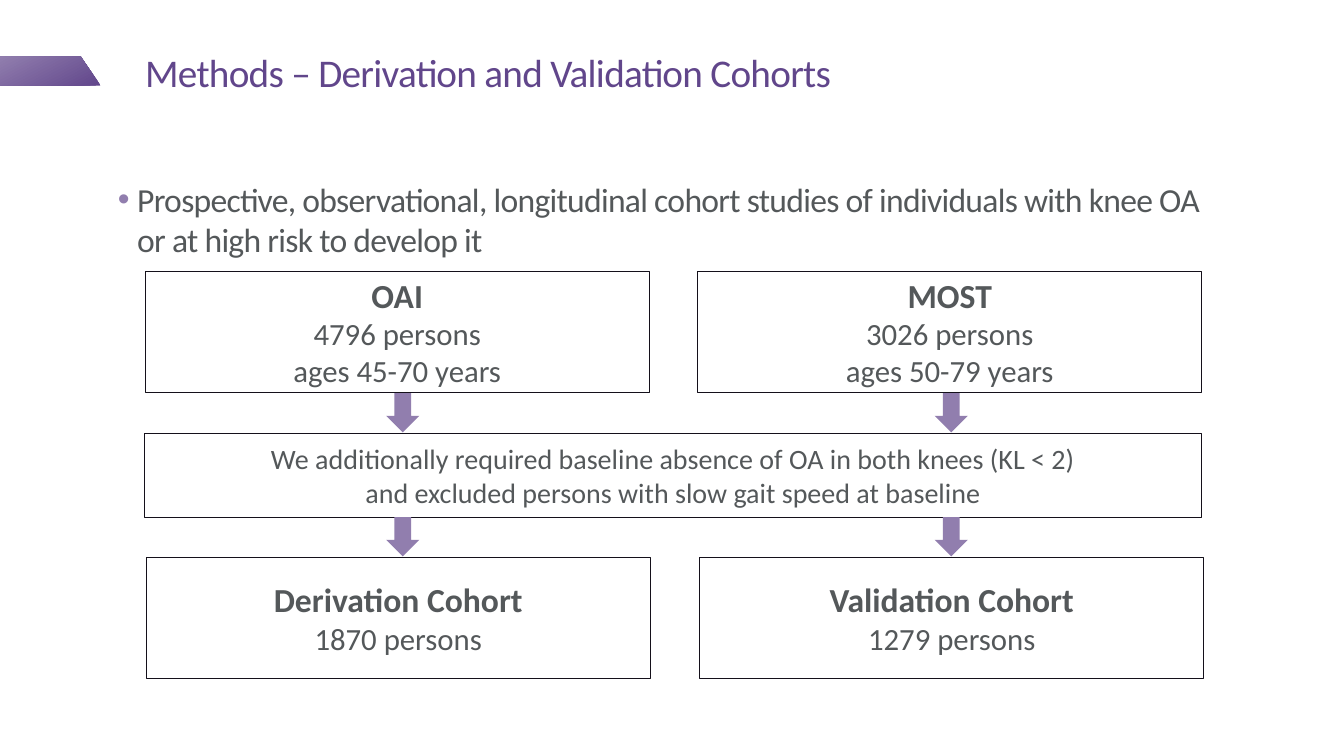
import pptx
import pptx.dml.color
import pptx.enum.shapes
import pptx.enum.text
import pptx.util
from lxml import etree
from pptx.oxml.ns import qn

PX = 9144  # EMU per px, 100 px to the inch
PURPLE, LILAC, GREY, INK = "61468B", "917EAE", "54585A", "14101A"
SHAPES = pptx.enum.shapes.MSO_SHAPE
ANCHOR = pptx.enum.text.MSO_ANCHOR
ALIGN = pptx.enum.text.PP_ALIGN


def emu(*lengths):
    return [pptx.util.Emu(length * PX) for length in lengths]


def colour(value):
    return pptx.dml.color.RGBColor.from_string(value)


def set_font(paragraph, size, value, bold=False):
    paragraph.font.name = "Calibri"
    paragraph.font.size = pptx.util.Pt(size)
    paragraph.font.bold = bold
    paragraph.font.color.rgb = colour(value)


def tighten(paragraph):
    """Draw the letters half a point closer together."""
    for run in paragraph.runs:
        run.font._element.set("spc", "-50")


def set_frame(frame, anchor, right=0, bottom=0):
    frame.word_wrap = True
    frame.auto_size = pptx.enum.text.MSO_AUTO_SIZE.NONE
    frame.vertical_anchor = anchor
    frame.margin_left = frame.margin_top = 0
    frame.margin_right, frame.margin_bottom = emu(right, bottom)


def add_title_tab(slide, left, top, width, height):
    """Purple tab with a slanted right end at the slide's edge."""
    builder = slide.shapes.build_freeform(left, top, scale=PX)
    builder.add_line_segments([
        (left + width - 20, top),
        (left + width, top + height),
        (left, top + height),
    ])
    tab = builder.convert_to_shape()
    tab.shadow.inherit = False
    tab.line.fill.background()
    tab.fill.gradient()
    tab.fill.gradient_angle = 118
    for stop, value in zip(tab.fill.gradient_stops, (PURPLE, LILAC)):
        stop.color.rgb = colour(value)


def set_title(slide, text, *box):
    title = slide.shapes.title
    title.left, title.top, title.width, title.height = emu(*box)
    set_frame(title.text_frame, ANCHOR.BOTTOM, 10, 5)
    paragraph = title.text_frame.paragraphs[0]
    paragraph.text = text
    paragraph.alignment = ALIGN.LEFT
    paragraph.line_spacing = 0.85
    set_font(paragraph, 28, PURPLE)
    tighten(paragraph)


def add_bullet_text(slide, text, *box):
    frame = slide.shapes.add_textbox(*emu(*box)).text_frame
    set_frame(frame, ANCHOR.TOP, 10, 5)
    paragraph = frame.paragraphs[0]
    paragraph.text = text
    properties = paragraph._p.get_or_add_pPr()
    properties.set("marL", str(19 * PX))
    properties.set("indent", str(-19 * PX))
    bullet_colour = etree.SubElement(properties, qn("a:buClr"))
    etree.SubElement(bullet_colour, qn("a:srgbClr"), val=LILAC)
    etree.SubElement(properties, qn("a:buFont"), typeface="Arial")
    etree.SubElement(properties, qn("a:buChar"), char="•")
    set_font(paragraph, 24, GREY)
    tighten(paragraph)


def add_box(slide, lines, *box):
    """Outlined box of centred lines, each given as (text, size, bold)."""
    shape = slide.shapes.add_shape(SHAPES.RECTANGLE, *emu(*box))
    shape.shadow.inherit = False
    shape.fill.background()
    shape.line.color.rgb = colour(INK)
    shape.line.width = pptx.util.Pt(0.75)
    frame = shape.text_frame
    set_frame(frame, ANCHOR.MIDDLE)
    for index, (text, size, bold) in enumerate(lines):
        paragraph = frame.add_paragraph() if index else frame.paragraphs[0]
        paragraph.text = text
        paragraph.alignment = ALIGN.CENTER
        set_font(paragraph, size, GREY, bold)


def add_cohort(slide, name, details, left, top):
    lines = [(name, 24, True)] + [(detail, 22, False) for detail in details]
    add_box(slide, lines, left, top, 500, 120)


def add_arrow(slide, left, top):
    arrow = slide.shapes.add_shape(SHAPES.DOWN_ARROW, *emu(left, top, 33, 39))
    arrow.shadow.inherit = False
    arrow.fill.solid()
    arrow.fill.fore_color.rgb = colour(LILAC)
    arrow.line.fill.background()


def add_cohort_flow(slide, left, top):
    """Two studies, the shared criteria below them, and the two cohorts."""
    criteria = ["We additionally required baseline absence of OA in both knees (KL < 2)",
                "and excluded persons with slow gait speed at baseline"]
    add_box(slide, [(text, 20, False) for text in criteria],
            left, top + 161, 1049, 83)
    cohorts = [
        ("OAI", ["4796 persons", "ages 45-70 years"], 1, 0),
        ("MOST", ["3026 persons", "ages 50-79 years"], 549, 0),
        ("Derivation Cohort", ["1870 persons"], 2, 284),
        ("Validation Cohort", ["1279 persons"], 551, 284),
    ]
    for name, details, across, down in cohorts:
        add_cohort(slide, name, details, left + across, top + down)
    for across in (240, 784):
        for down in (121, 244):
            add_arrow(slide, left + across, top + down)


def main():
    presentation = pptx.Presentation()
    presentation.slide_width, presentation.slide_height = emu(1333, 750)
    slide = presentation.slides.add_slide(presentation.slide_layouts[5])
    add_title_tab(slide, 0, 56, 100, 29)
    set_title(slide, "Methods – Derivation and Validation Cohorts", 144, 17, 1125, 83)
    add_bullet_text(
        slide,
        "Prospective, observational, longitudinal cohort studies of individuals "
        "with knee OA or at high risk to develop it",
        117, 177, 1108, 448)
    add_cohort_flow(slide, 143, 269)
    presentation.save("out.pptx")


if __name__ == "__main__":
    main()
